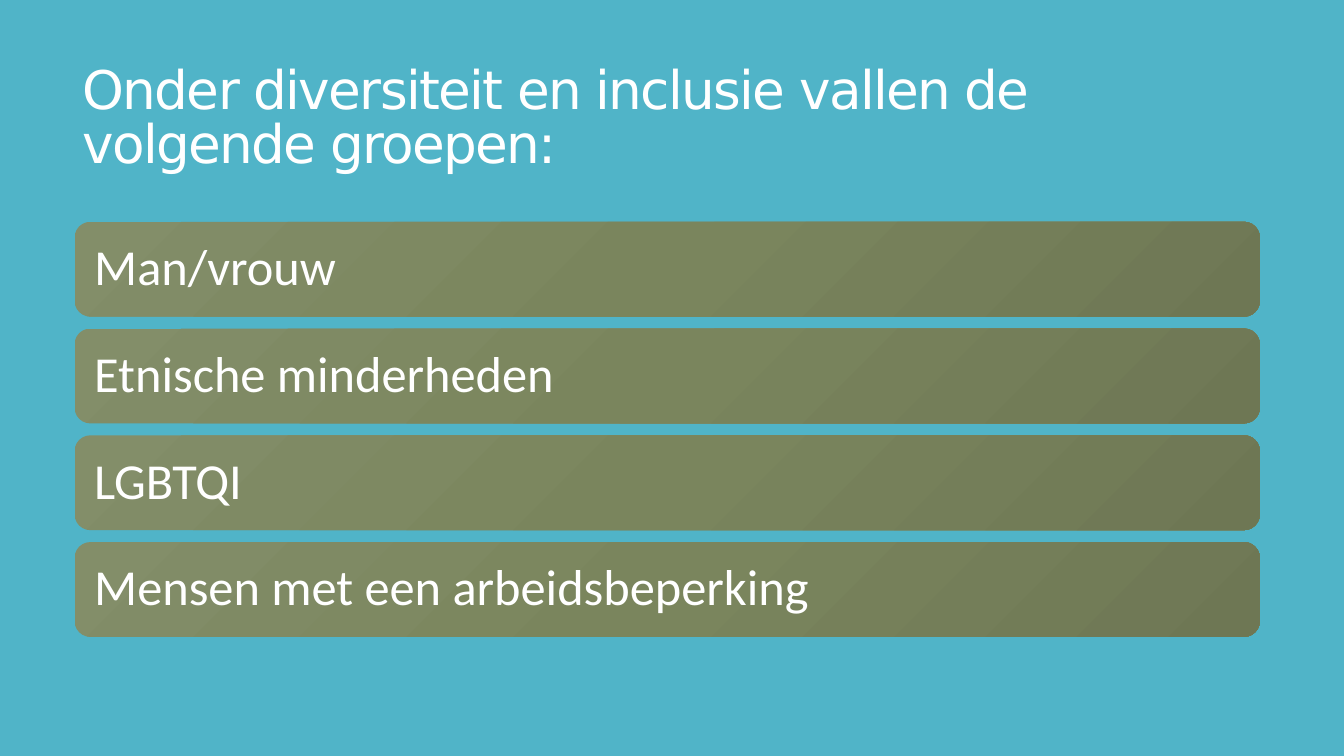
from copy import deepcopy
from dataclasses import dataclass

from pptx import Presentation
from pptx.dml.color import RGBColor
from pptx.enum.shapes import MSO_SHAPE
from pptx.enum.text import MSO_ANCHOR, PP_ALIGN
from pptx.oxml.ns import qn
from pptx.util import Cm, Pt

ROUNDED = MSO_SHAPE.ROUNDED_RECTANGLE
MIDDLE = MSO_ANCHOR.MIDDLE
LEFT = PP_ALIGN.LEFT


@dataclass(frozen=True)
class Theme:
    background: str = "50B4C8"
    text: str = "FFFFFF"
    bar: tuple = ("838E69", "7A855D", "6E7754")
    title_font: str = "DejaVu Sans"
    body_font: str = "Calibri"
    title_size: int = 38
    body_size: int = 36


theme = Theme()


def write(s, text, *, font, size, line, inset_x, inset_y, spacing=0):
    tf = s.text_frame
    tf.word_wrap = True
    tf.vertical_anchor = MIDDLE
    tf.margin_left = tf.margin_right = Cm(inset_x)
    tf.margin_top = tf.margin_bottom = Cm(inset_y)
    p = tf.paragraphs[0]
    p.alignment = LEFT
    p.line_spacing = line
    r = p.add_run()
    r.text = text
    r.font.name = font
    r.font.size = Pt(size)
    r.font.color.rgb = RGBColor.from_string(theme.text)
    if spacing:
        r.font._element.set("spc", str(round(spacing * 100)))


prs = Presentation()
prs.slide_width, prs.slide_height = Cm(33.87), Cm(19.05)
slide = prs.slides.add_slide(prs.slide_layouts[6])
slide.background.fill.solid()
slide.background.fill.fore_color.rgb = RGBColor.from_string(theme.background)

# Title
s = slide.shapes.add_textbox(Cm(1.83), Cm(1.4), Cm(29.92), Cm(3.25))
write(s, "Onder diversiteit en inclusie vallen de volgende groepen:",
      font=theme.title_font, size=theme.title_size, line=0.85,
      inset_x=0.25, inset_y=0.13, spacing=-1.2)

# Groups, one bar each
groups = ["Man/vrouw", "Etnische minderheden", "LGBTQI",
          "Mensen met een arbeidsbeperking"]
bar_top, bar_height, bar_gap = 5.59, 2.39, 0.3

for i, group in enumerate(groups):
    top = bar_top + i * (bar_height + bar_gap)
    s = slide.shapes.add_shape(ROUNDED, Cm(1.88), Cm(top), Cm(29.87), Cm(bar_height))
    s.shadow.inherit = False
    s.line.fill.background()

    # Diagonal gradient with a third, middle stop
    s.fill.gradient()
    s.fill.gradient_angle = 315
    first = s._element.spPr.find(".//" + qn("a:gs"))
    first.addnext(deepcopy(first))
    for stop, color, position in zip(s.fill.gradient_stops, theme.bar, (0, 0.5, 1)):
        stop.color.rgb = RGBColor.from_string(color)
        stop.position = position

    write(s, group, font=theme.body_font, size=theme.body_size, line=0.9,
          inset_x=0.38, inset_y=0.38)

prs.save("out.pptx")
